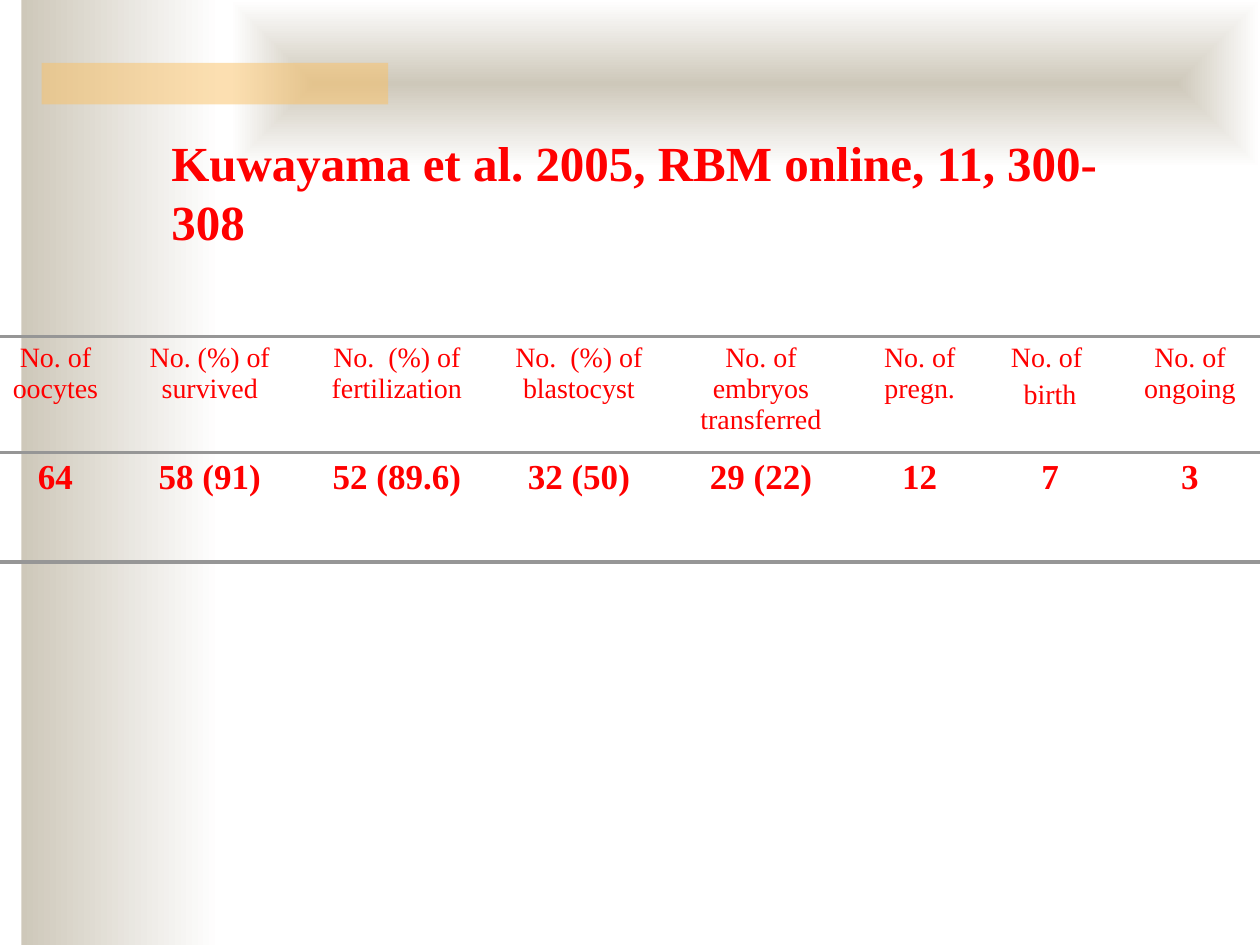
from lxml import etree
from pptx import Presentation
from pptx.dml.color import RGBColor
from pptx.enum.shapes import MSO_SHAPE
from pptx.enum.text import MSO_ANCHOR, MSO_AUTO_SIZE, PP_ALIGN
from pptx.oxml.ns import qn
from pptx.util import Inches, Pt

RECTANGLE = MSO_SHAPE.RECTANGLE
TOP = MSO_ANCHOR.TOP
FIXED = MSO_AUTO_SIZE.NONE
LEFT, CENTER = PP_ALIGN.LEFT, PP_ALIGN.CENTER

RED, GRAY, TAN, WHITE, GOLD = "FF0000", "969696", "CEC8BA", "FFFFFF", "FAC164"
FONT = "Times New Roman"

TITLE = "Kuwayama et al. 2005, RBM online, 11, 300-308"
COLUMNS = [
    (1.04, ["No. of oocytes"], "64"),
    (1.41, ["No. (%) of survived"], "58 (91)"),
    (1.56, ["No.  (%) of fertilization"], "52 (89.6)"),
    (1.33, ["No.  (%) of blastocyst"], "32 (50)"),
    (1.56, ["No. of embryos transferred"], "29 (22)"),
    (0.96, ["No. of pregn."], "12"),
    (1.11, ["No. of ", "birth"], "7"),
    (1.11, ["No. of ongoing"], "3"),
]
ROW_HEIGHTS = [0.92, 0.87]


def color(value):
    """Turn a hex string into a colour."""
    return RGBColor.from_string(value)


def write(frame, lines, size, bold=False, align=CENTER):
    """Fill a text frame with one paragraph per line."""
    for index, line in enumerate(lines):
        para = frame.add_paragraph() if index else frame.paragraphs[0]
        para.alignment = align
        if index:
            para.space_before = Pt(size * 0.2)
        span = para.add_run()
        span.text = line
        span.font.name = FONT
        span.font.size = Pt(size)
        span.font.bold = bold
        span.font.color.rgb = color(RED)


def add_panel(page, left, top, width, height):
    """Add a rectangle without line or shadow."""
    panel = page.shapes.add_shape(
        RECTANGLE, Inches(left), Inches(top), Inches(width), Inches(height))
    panel.shadow.inherit = False
    panel.line.fill.background()
    return panel


def add_gradient_panel(page, *bounds, centered=False):
    """Add a tan to white panel, fading rightwards or from its centre."""
    panel = add_panel(page, *bounds)
    panel.fill.gradient()
    panel.fill.gradient_angle = 0
    for stop, value in zip(panel.fill.gradient_stops, (TAN, WHITE)):
        stop.color.rgb = color(value)
    if centered:
        gradient = panel._element.spPr.find(qn("a:gradFill"))
        gradient.remove(gradient.find(qn("a:lin")))
        shade = etree.SubElement(gradient, qn("a:path"), path="rect")
        shade.set("path", "shape")
        etree.SubElement(shade, qn("a:fillToRect"),
                         {side: "50000" for side in "ltrb"})


def set_borders(cell):
    """Rule a cell above and below and leave its sides open."""
    properties = cell._tc.get_or_add_tcPr()
    for position, side in enumerate(("lnL", "lnR", "lnT", "lnB")):
        line = etree.Element(qn("a:" + side), w=str(Pt(2.25)))
        properties.insert(position, line)
        if side in ("lnT", "lnB"):
            fill = etree.SubElement(line, qn("a:solidFill"))
            etree.SubElement(fill, qn("a:srgbClr"), val=GRAY)
        else:
            etree.SubElement(line, qn("a:noFill"))


def add_results(page):
    """Add the table of outcomes."""
    table = page.shapes.add_table(
        len(ROW_HEIGHTS), len(COLUMNS), Inches(-0.08), Inches(2.67),
        Inches(sum(column[0] for column in COLUMNS)),
        Inches(sum(ROW_HEIGHTS))).table
    table.first_row = table.horz_banding = False
    for row, height in zip(table.rows, ROW_HEIGHTS):
        row.height = Inches(height)
    for index, (width, heading, value) in enumerate(COLUMNS):
        table.columns[index].width = Inches(width)
        write(table.cell(0, index).text_frame, heading, 16)
        write(table.cell(1, index).text_frame, [value], 20, bold=True)
    for cell in table.iter_cells():
        cell.fill.background()
        set_borders(cell)


def add_title(page):
    """Place and format the title above the panels."""
    title = page.shapes.title
    title.left, title.top = Inches(1.26), Inches(1)
    title.width, title.height = Inches(7.68), Inches(1.04)
    frame = title.text_frame
    frame.word_wrap = True
    frame.auto_size = FIXED
    frame.vertical_anchor = TOP
    write(frame, [TITLE], 28, bold=True, align=LEFT)
    page.shapes._spTree.append(title._element)


def main():
    """Build the deck."""
    deck = Presentation()
    deck.slide_width, deck.slide_height = Inches(10), Inches(7.5)
    page = deck.slides.add_slide(deck.slide_layouts[5])
    add_gradient_panel(page, 0.17, 0, 1.58, 7.5)
    add_gradient_panel(page, 1.83, 0, 8.17, 1.33, centered=True)
    accent = add_panel(page, 0.33, 0.5, 2.75, 0.33)
    accent.fill.solid()
    accent.fill.fore_color.rgb = color(GOLD)
    tint = accent._element.spPr.find(qn("a:solidFill"))[0]
    etree.SubElement(tint, qn("a:alpha"), val="50000")
    add_results(page)
    add_title(page)
    deck.save("out.pptx")


if __name__ == "__main__":
    main()
